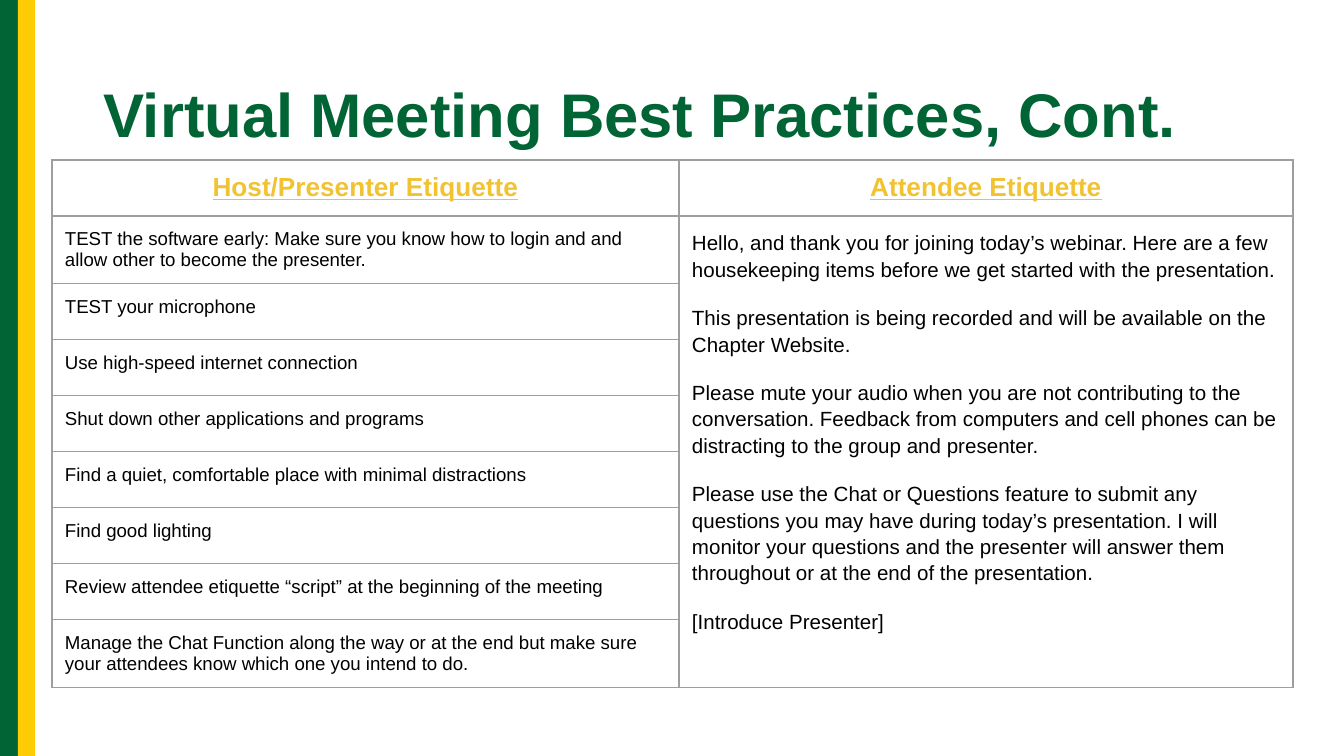
import dataclasses

import lxml.etree
import pptx
import pptx.dml.color
import pptx.enum.shapes
import pptx.enum.text
import pptx.oxml.ns
import pptx.util

SCALE = 914400 / 134.4  # EMU in one px
ALIGN = pptx.enum.text.PP_ALIGN


@dataclasses.dataclass(frozen=True)
class Theme:
    font: str = "Arial"
    green: str = "006435"
    yellow: str = "FFCB05"
    gold: str = "F1C232"
    black: str = "000000"
    grey: str = "9E9E9E"
    title: int = 33
    head: int = 14
    tip: int = 10
    script: int = 11
    rule: float = 0.75


@dataclasses.dataclass(frozen=True)
class Bar:
    left: int
    width: int
    color: str


@dataclasses.dataclass(frozen=True)
class Style:
    size: int
    color: str
    strong: bool = False
    under: bool = False
    align: int = ALIGN.LEFT
    line: float = 1.0
    gap: int = 0


THEME = Theme()
WIDTH, HEIGHT = 1344, 756
BARS = [Bar(0, 21, THEME.green), Bar(18, 17, THEME.yellow)]
COLS = [627, 614]
ROW, PAD = 56, 13

TITLE = Style(THEME.title, THEME.green, strong=True, line=0.9)
HEAD = Style(THEME.head, THEME.gold, strong=True, under=True, align=ALIGN.CENTER)
TIP = Style(THEME.tip, THEME.black)
SCRIPT = Style(THEME.script, THEME.black, line=1.15, gap=12)

HEADS = ["Host/Presenter Etiquette", "Attendee Etiquette"]
TIPS = [
    "TEST the software early: Make sure you know how to login and and allow other to become the presenter.",
    "TEST your microphone",
    "Use high-speed internet connection",
    "Shut down other applications and programs",
    "Find a quiet, comfortable place with minimal distractions",
    "Find good lighting",
    "Review attendee etiquette “script” at the beginning of the meeting",
    "Manage the Chat Function along the way or at the end but make sure your attendees know "
    "which one you intend to do.",
]
LINES = [
    "Hello, and thank you for joining today’s webinar. Here are a few housekeeping items "
    "before we get started with the presentation.",
    "This presentation is being recorded and will be available on the Chapter Website.",
    "Please mute your audio when you are not contributing to the conversation. Feedback from "
    "computers and cell phones can be distracting to the group and presenter.",
    "Please use the Chat or Questions feature to submit any questions you may have during "
    "today’s presentation. I will monitor your questions and the presenter will answer them "
    "throughout or at the end of the presentation.",
    "[Introduce Presenter]",
]


def px(value: int) -> pptx.util.Emu:
    return pptx.util.Emu(round(value * SCALE))


def rgb(color: str) -> pptx.dml.color.RGBColor:
    return pptx.dml.color.RGBColor.from_string(color)


def write(frame, text: str, style: Style) -> None:
    frame.text = text
    for index, para in enumerate(frame.paragraphs):
        para.alignment = style.align
        para.line_spacing = style.line
        para.space_before = pptx.util.Pt(style.gap if index else 0)
        for run in para.runs:
            font = run.font
            font.name = THEME.font
            font.size = pptx.util.Pt(style.size)
            font.bold = style.strong
            font.underline = style.under
            font.color.rgb = rgb(style.color)


def draw_bar(slide, bar: Bar) -> None:
    shape = slide.shapes.add_shape(
        pptx.enum.shapes.MSO_SHAPE.RECTANGLE, px(bar.left), 0, px(bar.width), px(HEIGHT))
    shape.shadow.inherit = False
    shape.fill.solid()
    shape.fill.fore_color.rgb = rgb(bar.color)
    shape.line.fill.background()


def frame_cell(cell) -> None:
    """Give a cell its padding, four grey rules and no fill."""
    cell.margin_left = cell.margin_right = px(PAD)
    cell.margin_top = cell.margin_bottom = px(PAD)
    props = cell._tc.get_or_add_tcPr()
    qn = pptx.oxml.ns.qn
    for side in ("a:lnL", "a:lnR", "a:lnT", "a:lnB"):
        rule = lxml.etree.SubElement(props, qn(side), w=str(pptx.util.Pt(THEME.rule)))
        fill = lxml.etree.SubElement(rule, qn("a:solidFill"))
        lxml.etree.SubElement(fill, qn("a:srgbClr"), val=THEME.grey)
    cell.fill.background()


def draw_table(slide) -> None:
    count = len(TIPS) + 1
    table = slide.shapes.add_table(
        count, len(COLS), px(52), px(160), px(sum(COLS)), px(ROW * count)).table
    table.first_row = table.horz_banding = False
    for col, width in zip(table.columns, COLS):
        col.width = px(width)
    for row in table.rows:
        row.height = px(ROW)
    for cell in table.iter_cells():
        frame_cell(cell)

    # Headings, host tips, then one tall cell for the attendee script
    for index, head in enumerate(HEADS):
        write(table.cell(0, index).text_frame, head, HEAD)
    for index, tip in enumerate(TIPS, 1):
        write(table.cell(index, 0).text_frame, tip, TIP)
    table.cell(1, 1).merge(table.cell(count - 1, 1))
    write(table.cell(1, 1).text_frame, "\n".join(LINES), SCRIPT)


def draw_title(slide) -> None:
    title = slide.shapes.title
    title.left, title.top, title.width, title.height = px(93), px(44), px(1158), px(147)
    frame = title.text_frame
    frame.margin_left = frame.margin_right = px(10)
    frame.margin_top = frame.margin_bottom = px(5)
    frame.vertical_anchor = pptx.enum.text.MSO_ANCHOR.MIDDLE
    frame.word_wrap = True
    write(frame, "Virtual Meeting Best Practices, Cont.", TITLE)


def main() -> None:
    deck = pptx.Presentation()
    deck.slide_width, deck.slide_height = px(WIDTH), px(HEIGHT)
    slide = deck.slides.add_slide(deck.slide_layouts[5])  # title only

    # Stripes on the left edge
    for bar in BARS:
        draw_bar(slide, bar)

    # Title and table
    draw_title(slide)
    draw_table(slide)
    deck.save("out.pptx")


if __name__ == "__main__":
    main()
